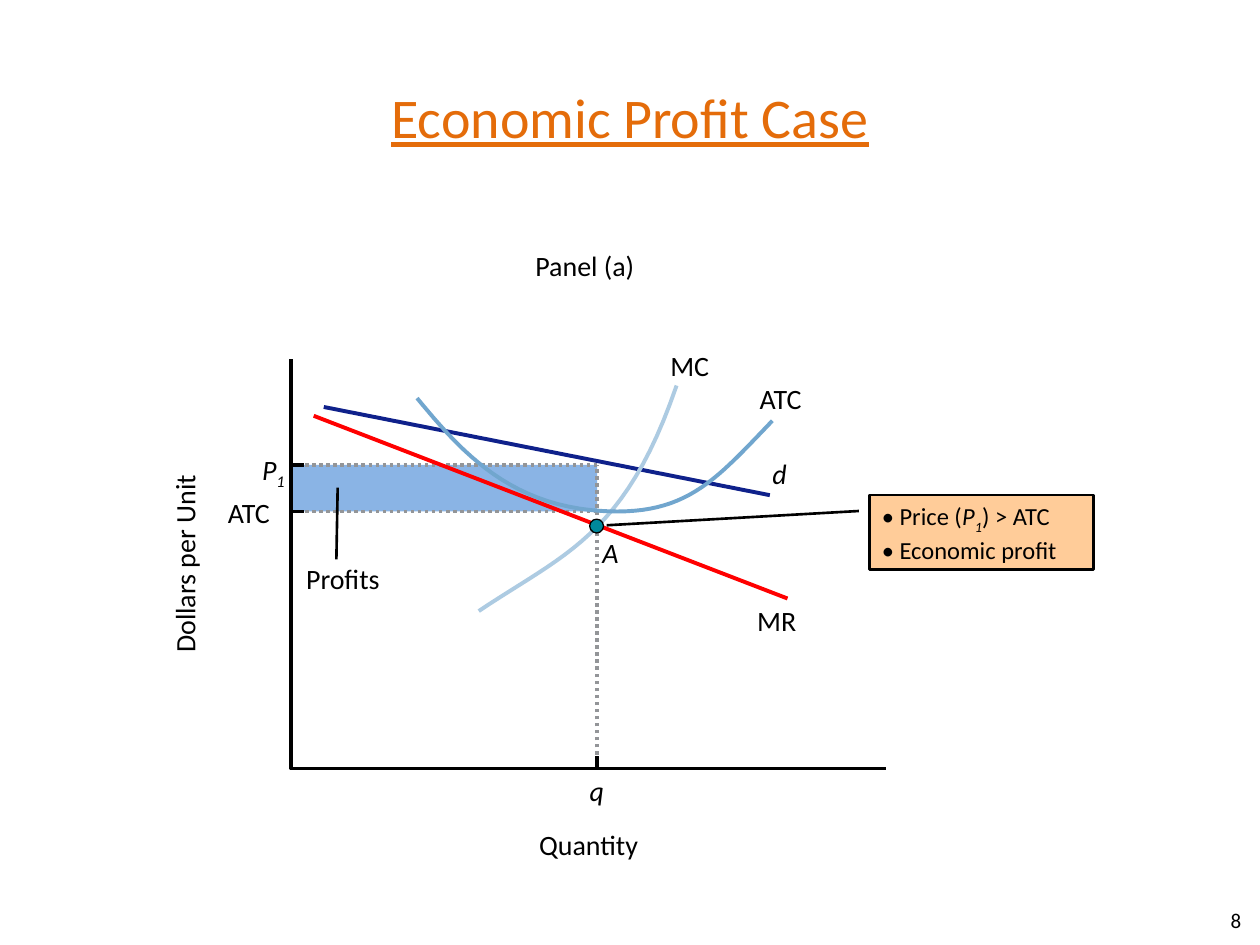
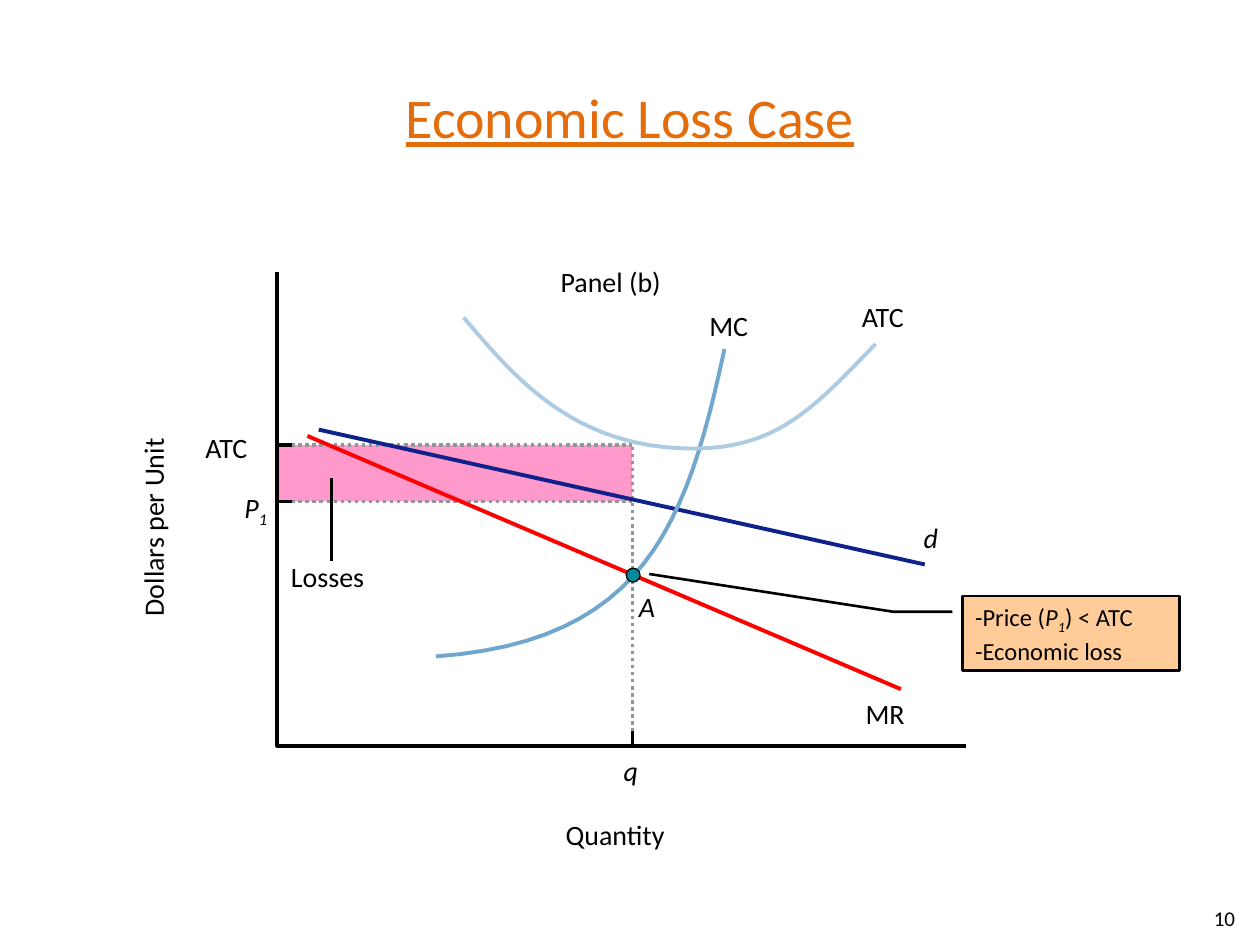
from lxml import etree
from pptx import Presentation
from pptx.dml.color import RGBColor
from pptx.enum import dml, shapes, text
from pptx.oxml import ns
from pptx.util import Inches, Pt

FONT = "Calibri"
BLACK = RGBColor(0, 0, 0)
WHITE = RGBColor(255, 255, 255)
ORANGE = RGBColor(0xE4, 0x6C, 0x0A)
PEACH = RGBColor(0xFF, 0xCC, 0x99)
GREY = RGBColor(0x93, 0x95, 0x98)
NAVY = RGBColor(0x0F, 0x21, 0x8B)
RED = RGBColor(255, 0, 0)
TEAL = RGBColor(0, 0x88, 0x9B)
PALE = RGBColor(0xAD, 0xCB, 0xE2)
STEEL = RGBColor(0x71, 0xA6, 0xCE)
SKY = RGBColor(0x8A, 0xB4, 0xE5)
PINK = RGBColor(0xFF, 0x99, 0xCC)

# Runs are (text, style): i = italic, s = subscript
PRICE = [("P", "i"), ("1", "is")]
WORDS = {
    "panel a": ([("Panel (a)", "")], 0.9),
    "panel b": ([("Panel (b)", "")], 0.9),
    "quantity": ([("Quantity", "")], 0.83),
    "unit": ([("Dollars per Unit", "")], 1.53),
    "q": ([("q", "i")], 0.12),
    "d": ([("d", "i")], 0.12),
    "A": ([("A", "i")], 0.15),
    "P1": (PRICE, 0.23),
    "ATC": ([("ATC", "")], 0.44),
    "MC": ([("MC", "")], 0.35),
    "MR": ([("MR", "")], 0.35),
    "Profits": ([("Profits", "")], 0.63),
    "Losses": ([("Losses", "")], 0.7),
}

# Curves list a start point, then two controls and an end for each part
CASES = [
    dict(
        title="Economic Profit Case", number="8", foot=(6.03, 7.1),
        origin=(2.31, 6.1), ends=(7.03, 2.85), q=4.74, levels=(3.69, 4.06),
        tick=0.1, area=SKY, point=(4.68, 4.12),
        demand=((2.57, 3.23), (6.11, 3.93)), mr=((2.49, 3.3), (6.25, 4.75)),
        lead=((2.67, 4.44), (2.68, 3.87)),
        mc=(PALE, [(3.8, 4.85), (4.47, 4.4), (4.96, 4.26), (5.37, 3.06)]),
        atc=(STEEL, [(3.31, 3.16), (3.65, 3.57), (4.06, 4.06), (4.9, 4.06),
                     (5.47, 4.06), (5.7, 3.79), (6.13, 3.34)]),
        note=(6.9, 3.93, 1.78, 0.59),
        bend=(0.213, -0.047, 0.213, -0.047, 0.405, -1.172),
        lines=[[("• Price (", ""), *PRICE, (") > ATC", "")],
               [("• Economic profit", "")]],
        labels=[("panel a", 4.25, 1.97), ("quantity", 4.28, 6.57),
                ("q", 4.68, 6.14), ("P1", 2.08, 3.59), ("ATC", 1.81, 3.93),
                ("d", 6.13, 3.62), ("MC", 5.32, 2.77), ("MR", 6.01, 4.79),
                ("Profits", 2.43, 4.46), ("ATC", 6.03, 3.03),
                ("A", 4.78, 4.25), ("unit", 0.7, 4.28)],
    ),
    dict(
        title="Economic Loss Case", number="10", foot=(5.98, 7.09),
        origin=(2.2, 5.92), ends=(7.67, 2.16), q=5.02, levels=(3.53, 3.98),
        tick=0.12, area=PINK, point=(4.97, 4.51),
        demand=((2.53, 3.41), (7.34, 4.48)), mr=((2.44, 3.46), (7.15, 5.47)),
        lead=((2.63, 4.45), (2.63, 3.79)),
        mc=(STEEL, [(3.46, 5.21), (5.11, 5.09), (5.45, 4.17), (5.75, 2.77)]),
        atc=(PALE, [(3.68, 2.52), (4.08, 2.99), (4.55, 3.56), (5.5, 3.56),
                    (6.16, 3.56), (6.45, 3.25), (6.95, 2.73)]),
        note=(7.64, 4.73, 1.72, 0.59),
        bend=(0.213, -0.048, 0.213, -0.319, -0.296, -1.446),
        lines=[[("-Price (", ""), *PRICE, (") < ATC", "")],
               [("-Economic loss", "")]],
        labels=[("panel b", 4.45, 2.1), ("quantity", 4.49, 6.49),
                ("q", 4.95, 5.98), ("ATC", 1.63, 3.42), ("P1", 1.94, 3.89),
                ("d", 7.33, 4.13), ("MC", 5.63, 2.45), ("MR", 6.87, 5.53),
                ("Losses", 2.31, 4.44), ("ATC", 6.84, 2.38),
                ("A", 5.07, 4.68), ("unit", 0.45, 3.99)],
    ),
]


def write(par, runs, size, color=BLACK):
    for words, style in runs:
        run = par.add_run()
        run.text = words
        font = run.font
        font.name, font.size, font.color.rgb = FONT, Pt(size), color
        if "i" in style:
            font.italic = True
        if "s" in style:
            font._element.set("baseline", "-25000")


def label(slide, key, x, y):
    runs, wide = WORDS[key]
    box = slide.shapes.add_textbox(*map(Inches, (x, y, wide, 0.27)))
    frame = box.text_frame
    frame.margin_left = frame.margin_right = 0
    frame.margin_top = frame.margin_bottom = 0
    frame.word_wrap = False
    frame.auto_size = text.MSO_AUTO_SIZE.SHAPE_TO_FIT_TEXT
    write(frame.paragraphs[0], runs, 16)
    if key == "unit":
        box.rotation = 270


def line(slide, start, end, color=BLACK, width=2.0, dots=False):
    rule = slide.shapes.add_connector(
        shapes.MSO_CONNECTOR.STRAIGHT, *map(Inches, (*start, *end)))
    rule.line.color.rgb, rule.line.width = color, Pt(width)
    if dots:
        rule.line.dash_style = dml.MSO_LINE.ROUND_DOT
    etree.SubElement(rule._element.spPr, ns.qn("a:effectLst"))


def stroke(slide, points, color, width):
    """Draw an open outline through the points."""
    first, *rest = [(Inches(x), Inches(y)) for x, y in points]
    pen = slide.shapes.build_freeform(*first)
    pen.add_line_segments(rest, close=False)
    form = pen.convert_to_shape()
    form.fill.background()
    form.line.color.rgb, form.line.width = color, Pt(width)
    form.shadow.inherit = False


def bezier(knots, steps=24):
    """Return points along a chain of cubic curves."""
    points = [knots[0]]
    for k in range(0, len(knots) - 1, 3):
        part = knots[k:k + 4]
        for n in range(1, steps + 1):
            t = n / steps
            s = 1 - t
            mix = (s ** 3, 3 * s * s * t, 3 * s * t * t, t ** 3)
            points.append(tuple(
                sum(m * p[axis] for m, p in zip(mix, part))
                for axis in (0, 1)))
    return points


def solid(slide, kind, place, fill, width=None):
    form = slide.shapes.add_shape(kind, *map(Inches, place))
    form.shadow.inherit = False
    form.fill.solid()
    form.fill.fore_color.rgb = fill
    if width is None:
        form.line.fill.background()
    else:
        form.line.color.rgb, form.line.width = BLACK, Pt(width)
    return form


def head(slide, case):
    title = slide.shapes.title
    title.left, title.top, title.width, title.height = map(
        Inches, (0.5, 0.3, 9, 1.25))
    frame = title.text_frame
    frame.vertical_anchor = text.MSO_ANCHOR.MIDDLE
    par = frame.paragraphs[0]
    par.alignment = text.PP_ALIGN.CENTER
    write(par, [(case["title"], "")], 32, ORANGE)
    par.runs[0].font.underline = True


def foot(slide, case):
    box = slide.shapes.add_textbox(*map(Inches, (*case["foot"], 3.92, 0.4)))
    frame = box.text_frame
    frame.word_wrap = True
    frame.vertical_anchor = text.MSO_ANCHOR.MIDDLE
    par = frame.paragraphs[0]
    par.alignment = text.PP_ALIGN.RIGHT
    write(par, [(case["number"], "")], 12)


def note(slide, case):
    form = solid(slide, shapes.MSO_SHAPE.LINE_CALLOUT_2,
                 case["note"], PEACH, 1.5)
    for n, value in enumerate(case["bend"]):
        form.adjustments[n] = value
    frame = form.text_frame
    frame.word_wrap = True
    frame.vertical_anchor = text.MSO_ANCHOR.TOP
    for n, runs in enumerate(case["lines"]):
        par = frame.add_paragraph() if n else frame.paragraphs[0]
        par.alignment = text.PP_ALIGN.LEFT
        write(par, runs, 14)


def graph(slide, case):
    left, base = case["origin"]
    right, peak = case["ends"]
    q, tick = case["q"], case["tick"]
    top, low = case["levels"]
    solid(slide, shapes.MSO_SHAPE.RECTANGLE,
          (left, top, q - left, low - top), case["area"])
    line(slide, (q, base), (q, top), GREY, dots=True)
    line(slide, (q, base), (q, base - tick))
    for y in (top, low):
        line(slide, (left, y), (q, y), GREY, dots=True)
        line(slide, (left, y), (left + tick, y))

    color, knots = case["mc"]
    curve = bezier(knots)
    stroke(slide, curve, WHITE, 3)
    line(slide, *case["demand"], NAVY, 2.25)
    stroke(slide, curve, color, 2.25)
    stroke(slide, [(right, base), (left, base), (left, peak)], BLACK, 2)
    line(slide, *case["mr"], RED, 2.25)
    line(slide, *case["lead"], width=1.5)
    color, knots = case["atc"]
    stroke(slide, bezier(knots), color, 2.25)
    solid(slide, shapes.MSO_SHAPE.OVAL,
          (*case["point"], 0.11, 0.11), TEAL, 0)


def main():
    deck = Presentation()
    deck.slide_width, deck.slide_height = Inches(10), Inches(7.5)
    for case in CASES:
        slide = deck.slides.add_slide(deck.slide_layouts[5])
        head(slide, case)
        foot(slide, case)
        note(slide, case)
        graph(slide, case)
        for item in case["labels"]:
            label(slide, *item)
    deck.save("out.pptx")


if __name__ == "__main__":
    main()
